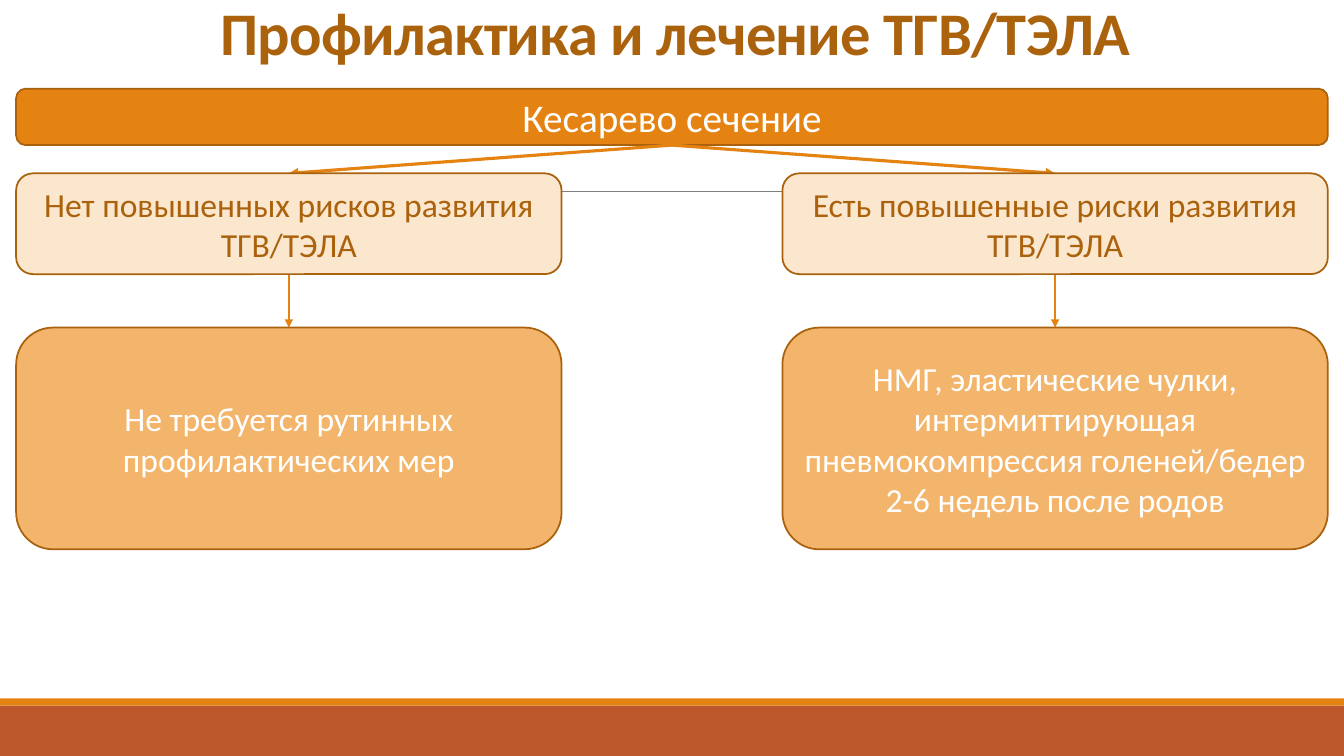
from dataclasses import dataclass
from lxml.etree import SubElement
from pptx import Presentation
from pptx.dml.color import RGBColor
from pptx.enum.shapes import MSO_CONNECTOR, MSO_SHAPE
from pptx.enum.text import MSO_ANCHOR, MSO_AUTO_SIZE, PP_ALIGN
from pptx.oxml.ns import qn
from pptx.util import Inches, Pt


@dataclass(frozen=True)
class Theme:
    font: str = "Calibri"
    orange: str = "E48312"
    rust: str = "BD582C"
    edge: str = "A9610D"
    brown: str = "AB620D"
    cream: str = "FBE6CE"
    peach: str = "F3B56C"
    gray: str = "808080"
    white: str = "FFFFFF"
    title: float = 43.2
    head: float = 28
    body: float = 24


theme = Theme()


def color(code):
    return RGBColor.from_string(code)


def write(frame, text, size, code, anchor=MSO_ANCHOR.MIDDLE, bold=False):
    frame.text = text
    frame.word_wrap = True
    frame.auto_size = MSO_AUTO_SIZE.NONE
    frame.vertical_anchor = anchor
    par = frame.paragraphs[0]
    par.alignment = PP_ALIGN.CENTER
    run = par.runs[0]
    run.font.name = theme.font
    run.font.size = Pt(size)
    run.font.bold = bold
    run.font.color.rgb = color(code)
    return par


def block(slide, box, fill, kind=MSO_SHAPE.RECTANGLE):
    shape = slide.shapes.add_shape(kind, *map(Inches, box))
    shape.shadow.inherit = False
    shape.fill.solid()
    shape.fill.fore_color.rgb = color(fill)
    shape.line.fill.background()
    return shape


def card(slide, box, text, fill, size, code):
    shape = block(slide, box, fill, MSO_SHAPE.ROUNDED_RECTANGLE)
    shape.line.color.rgb = color(theme.edge)
    shape.line.width = Pt(1.25)
    write(shape.text_frame, text, size, code)


def link(slide, start, end, code, width, arrow=True):
    line = slide.shapes.add_connector(
        MSO_CONNECTOR.STRAIGHT, *map(Inches, (*start, *end)))
    line.line.color.rgb = color(code)
    line.line.width = Pt(width)
    if arrow:
        SubElement(line.line._get_or_add_ln(), qn("a:tailEnd"), type="triangle")
    SubElement(line._element.spPr, qn("a:effectLst"))


def footer(slide, box):
    left, top, width, height = box
    strip = 0.07
    block(slide, (left, top + strip, width, height - strip), theme.rust)
    block(slide, (left, top, width, strip), theme.orange)


def heading(slide, box, text):
    title = slide.shapes.title
    title.left, title.top, title.width, title.height = map(Inches, box)
    par = write(title.text_frame, text, theme.title, theme.brown,
                MSO_ANCHOR.BOTTOM, True)
    par.line_spacing = 0.85
    par.runs[0]._r.get_or_add_rPr().set("spc", "-50")


def branch(slide, box, root, risk, care):
    left, top, width, height = box
    mid = left + width / 2
    upper, gap = 1, 0.53
    lower = top + upper + gap
    link(slide, root, (mid, top), theme.orange, 2.25)
    link(slide, (mid, top + upper), (mid, lower), theme.orange, 1)
    card(slide, (left, top, width, upper), risk,
         theme.cream, theme.body, theme.brown)
    card(slide, (left, lower, width, height - upper - gap), care,
         theme.peach, theme.body, theme.white)


def chart(slide, box, root, sides):
    left, top, width, height = box
    bar, gap, side = 0.56, 0.28, 5.41
    card(slide, (left, top, width, bar), root,
         theme.orange, theme.head, theme.white)
    start = (left + width / 2, top + bar)
    below = top + bar + gap
    for index, (risk, care) in enumerate(sides):
        place = left + index * (width - side)
        branch(slide, (place, below, side, height - bar - gap),
               start, risk, care)


def main():
    deck = Presentation()
    deck.slide_width, deck.slide_height = Inches(13.33), Inches(7.5)
    slide = deck.slides.add_slide(deck.slide_layouts[5])
    footer(slide, (0, 6.93, 13.33, 0.57))
    link(slide, (1.31, 1.9), (12.21, 1.9), theme.gray, 0.5, False)
    heading(slide, (0.98, -0.41, 11.44, 1.13), "Профилактика и лечение ТГВ/ТЭЛА")
    chart(slide, (0.16, 0.88, 13.01, 4.57), "Кесарево сечение", [
        ("Нет повышенных рисков развития ТГВ/ТЭЛА",
         "Не требуется рутинных профилактических мер"),
        ("Есть повышенные риски развития ТГВ/ТЭЛА",
         "НМГ, эластические чулки, интермиттирующая "
         "пневмокомпрессия голеней/бедер 2-6 недель после родов"),
    ])
    deck.save("out.pptx")


if __name__ == "__main__":
    main()
